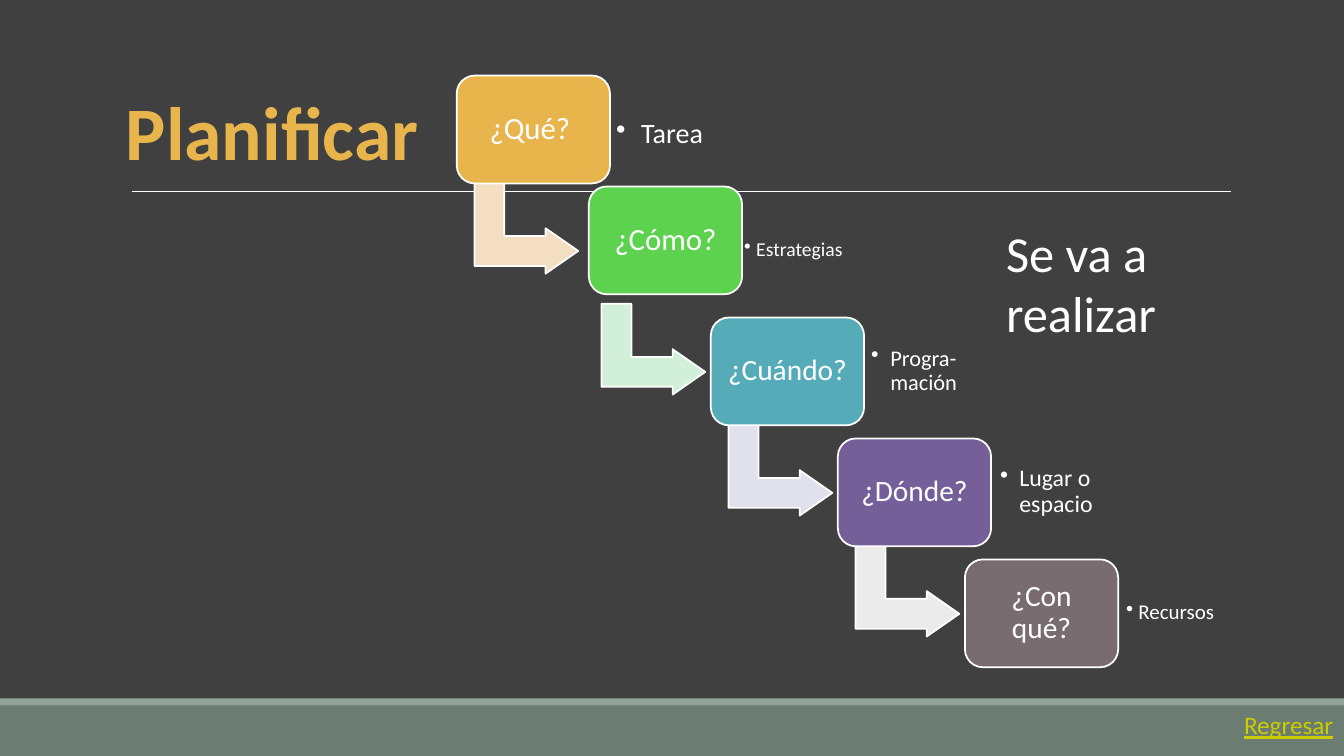
from lxml.etree import SubElement
from pptx import Presentation
from pptx.dml.color import RGBColor
from pptx.enum.shapes import MSO_CONNECTOR, MSO_SHAPE
from pptx.enum.text import MSO_ANCHOR, MSO_AUTO_SIZE, PP_ALIGN
from pptx.oxml.ns import qn
from pptx.util import Inches, Pt

# Content
TITLE = "Planificar"
SIDE_NOTE = "Se va a realizar"
RETURN_LABEL = "Regresar"
# question, size, box colour, box shift, arrow colour
STEPS = [
    ("¿Qué? ", 22, "E8B54D", (0, 0), "F4DEC2"),
    ("¿Cómo?", 22, "5CD24F", (0.05, -0.1), "D2EFD9"),
    ("¿Cuándo?", 21, "55ABB8", (0, 0), "E0E1EC"),
    ("¿Dónde?", 21, "745F99", (0, 0), "ECEBEB"),
    ("¿Con qué?", 21, "786C71", (0, 0), None),
]
# answer, size, bullet indent, inset, shift
ANSWERS = [
    ("Tarea", 20, 0.25, 0.08, (-0.02, 0.05)),
    ("Estrategias", 14, 0.12, 0.06, (0.01, 0)),
    ("Progra-mación", 16, 0.19, 0.07, (0, 0)),
    ("Lugar o espacio", 17, 0.19, 0.09, (0, 0)),
    ("Recursos", 15, 0.12, 0.08, (0, 0)),
]
BANDS = [(7, 0.5, "6B7D72"), (6.93, 0.07, "93A299")]

# Geometry of the staircase, in inches
STEP_X, STEP_Y = 1.26, 1.2
BOX = (4.53, 0.75, 1.52, 1.07)
ARROW = (4.77, 1.75, 0.9, 1.03)
ANSWER = (6.05, 0.85, 1.11, 0.86)
WHITE = "FFFFFF"


def color(value):
    return RGBColor.from_string(value)


def on_step(index, frame, shift=(0, 0)):
    left, top, width, height = frame
    return (left + index * STEP_X + shift[0], top + index * STEP_Y + shift[1],
            width, height)


def add_filled(kind, frame, fill, outline=None):
    shape = slide.shapes.add_shape(kind, *map(Inches, frame))
    shape.shadow.inherit = False
    shape.fill.solid()
    shape.fill.fore_color.rgb = color(fill)
    if outline:
        shape.line.color.rgb = color(outline)
        shape.line.width = Pt(1.25)
    else:
        shape.line.fill.background()
    return shape


def write(shape, text, size, text_color=WHITE, align=PP_ALIGN.LEFT, inset=None, wrap=True):
    frame = shape.text_frame
    frame.text = text
    frame.word_wrap = wrap
    paragraph = frame.paragraphs[0]
    paragraph.alignment = align
    if inset is not None:
        frame.margin_left = frame.margin_right = Inches(inset)
        frame.margin_top = frame.margin_bottom = Inches(inset)
        frame.vertical_anchor = MSO_ANCHOR.MIDDLE
        paragraph.line_spacing = 0.9
    font = paragraph.runs[0].font
    font.name = "Calibri"
    font.size = Pt(size)
    font.color.rgb = color(text_color)
    return paragraph


def add_bullet(paragraph, indent):
    properties = paragraph._p.get_or_add_pPr()
    properties.set("marL", str(Inches(indent)))
    properties.set("indent", str(-Inches(indent)))
    SubElement(properties, qn("a:buChar")).set("char", "•")


def add_text_box(frame):
    return slide.shapes.add_textbox(*map(Inches, frame))


presentation = Presentation()
presentation.slide_width = Inches(13.33)
presentation.slide_height = Inches(7.5)
slide = presentation.slides.add_slide(presentation.slide_layouts[5])
slide.background.fill.solid()
slide.background.fill.fore_color.rgb = color("404040")

# Title and the rule below it
title = slide.shapes.title
title.left, title.top, title.width, title.height = map(Inches, (1.13, 0.79, 3.14, 1.01))
write(title, TITLE, 54, "E8B54D", PP_ALIGN.CENTER, wrap=False).runs[0].font.bold = True
title.text_frame.vertical_anchor = MSO_ANCHOR.MIDDLE
title.text_frame.auto_size = MSO_AUTO_SIZE.NONE
rule = slide.shapes.add_connector(
    MSO_CONNECTOR.STRAIGHT, Inches(1.31), Inches(1.9), Inches(12.21), Inches(1.9))
rule.line.color.rgb = color(WHITE)
rule.line.width = Pt(0.5)
SubElement(rule._element.spPr, qn("a:effectLst"))

# Footer bands
for top, height, fill in BANDS:
    add_filled(MSO_SHAPE.RECTANGLE, (0, top, 13.33, height), fill)

# Staircase: arrow, question box and answer on each step
for index, (step, answer) in enumerate(zip(STEPS, ANSWERS)):
    question, size, fill, shift, arrow_fill = step
    if arrow_fill:
        arrow = add_filled(MSO_SHAPE.BENT_UP_ARROW, on_step(index, ARROW), arrow_fill, WHITE)
        arrow.rotation = 90
        for position, value in enumerate((0.33, 0.25, 0.36)):
            arrow.adjustments[position] = value
    box = add_filled(MSO_SHAPE.ROUNDED_RECTANGLE, on_step(index, BOX, shift), fill, WHITE)
    write(box, question, size, align=PP_ALIGN.CENTER, inset=0.09)

    text, size, indent, inset, shift = answer
    answer_box = add_text_box(on_step(index, ANSWER, shift))
    add_bullet(write(answer_box, text, size, inset=inset), indent)

# Side note and return label
write(add_text_box((9.88, 2.15, 3.1, 1.31)), SIDE_NOTE, 36)
return_box = add_text_box((12.24, 6.99, 1.1, 0.4))
write(return_box, RETURN_LABEL, 18, "CCCC00", wrap=False).runs[0].font.underline = True

presentation.save("out.pptx")
